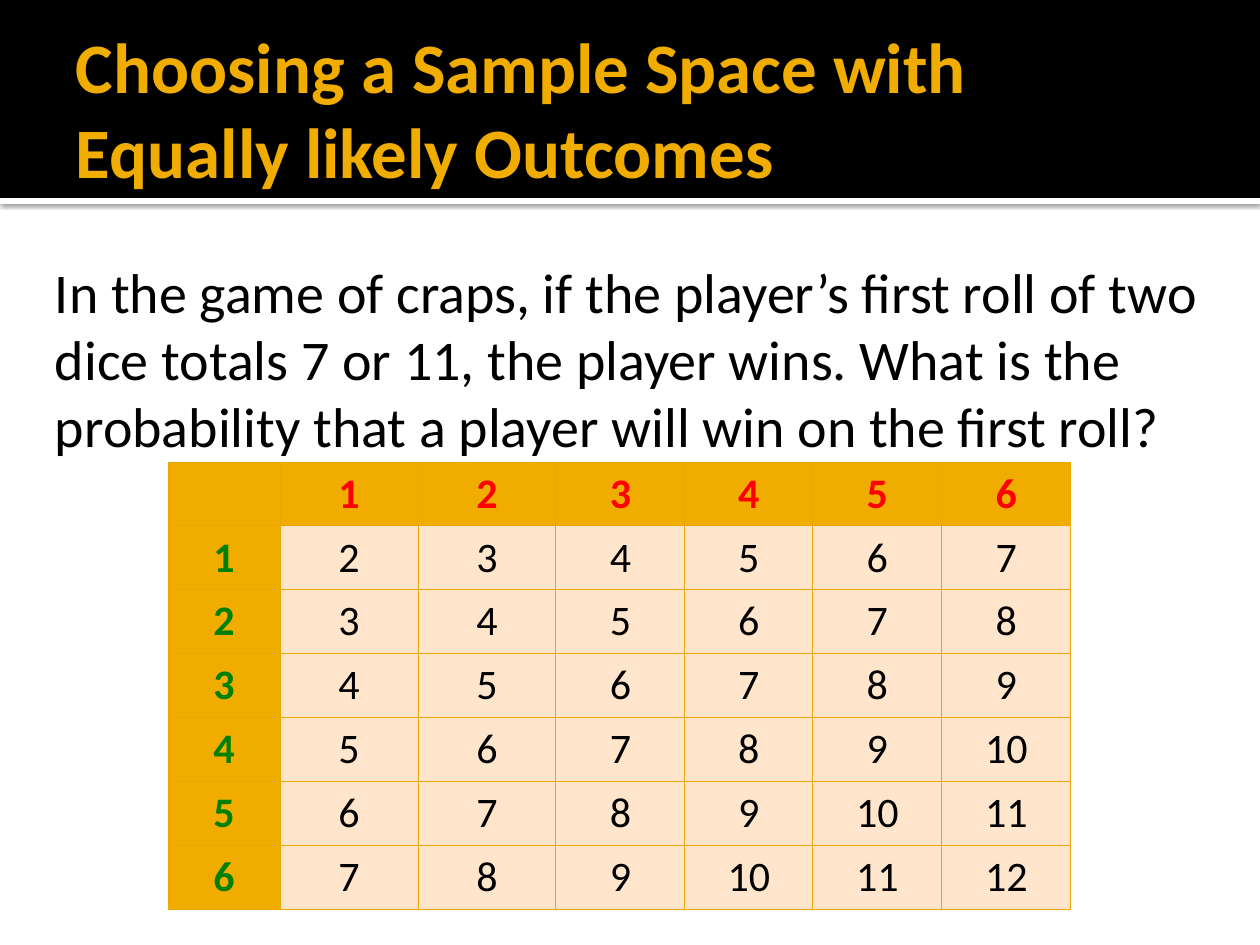
"""Build a slide on the equally likely outcomes of two dice."""
from dataclasses import dataclass
from typing import NamedTuple

from lxml.etree import SubElement
from pptx import Presentation
from pptx.dml.color import RGBColor
from pptx.enum.shapes import MSO_SHAPE as Shape
from pptx.enum.text import MSO_ANCHOR as Anchor, MSO_AUTO_SIZE as AutoSize, PP_ALIGN as Align
from pptx.oxml.ns import qn
from pptx.util import Emu, Pt

PX_PER_INCH = 126
PAGE_WIDTH, PAGE_HEIGHT = 1260, 945
TITLE = "Choosing a Sample Space with Equally likely Outcomes"
QUESTION = (
    "In the game of craps, if the player’s first roll of two dice totals 7 or 11, "
    "the player wins. What is the probability that a player will win on the first roll?"
)
DICE_FACES = range(1, 7)
COLUMN_WIDTHS = (112, 138, 138, 129, 128, 129, 129)
ROW_HEIGHT = 63


class Frame(NamedTuple):
    left: int
    top: int
    width: int
    height: int


class Insets(NamedTuple):
    left: int
    top: int
    right: int
    bottom: int


@dataclass(frozen=True)
class TextStyle:
    size: float
    color: str
    bold: bool = False


@dataclass(frozen=True)
class Bar:
    frame: Frame
    color: str
    shadowed: bool = False


@dataclass(frozen=True)
class Theme:
    font: str = "Calibri"
    header_fill: str = "F0AD00"
    cell_fill: str = "FFE5CB"
    border: str = "EBA900"
    title: TextStyle = TextStyle(40.5, "F0AD00", True)
    body: TextStyle = TextStyle(32, "000000")
    first_die: TextStyle = TextStyle(24, "FF0000", True)
    second_die: TextStyle = TextStyle(24, "008000", True)
    total: TextStyle = TextStyle(24, "000000")


THEME = Theme()
BARS = (
    Bar(Frame(0, 198, PAGE_WIDTH, 6), "FFFFFF", shadowed=True),
    Bar(Frame(0, 0, PAGE_WIDTH, 198), "000000"),
)


def px(length: int) -> Emu:
    """Turn pixels into EMU."""
    return Emu(round(length * 914400 / PX_PER_INCH))


def place(shape, frame: Frame) -> None:
    """Move and size a shape."""
    shape.left, shape.top, shape.width, shape.height = map(px, frame)


def write(text_frame, text: str, style: TextStyle, align: Align) -> None:
    """Set the text of a frame and format it."""
    text_frame.text = text
    para = text_frame.paragraphs[0]
    para.alignment = align
    for span in para.runs:
        span.font.name = THEME.font
        span.font.size = Pt(style.size)
        span.font.bold = style.bold
        span.font.color.rgb = RGBColor.from_string(style.color)


def fit_box(text_frame, insets: Insets, anchor: Anchor) -> None:
    """Set wrapping, anchor and insets of a text frame."""
    text_frame.word_wrap = True
    text_frame.auto_size = AutoSize.NONE
    text_frame.vertical_anchor = anchor
    text_frame.margin_left, text_frame.margin_top = px(insets.left), px(insets.top)
    text_frame.margin_right, text_frame.margin_bottom = px(insets.right), px(insets.bottom)


def add_bar(page, bar: Bar) -> None:
    """Draw a plain bar, with a soft shadow below if asked."""
    shape = page.shapes.add_shape(Shape.RECTANGLE, *map(px, bar.frame))
    shape.shadow.inherit = False
    shape.fill.solid()
    shape.fill.fore_color.rgb = RGBColor.from_string(bar.color)
    shape.line.fill.background()
    if bar.shadowed:
        effects = shape.element.spPr.find(qn("a:effectLst"))
        shadow = SubElement(effects, qn("a:outerShdw"), blurRad=str(Pt(2.5)),
                            dist=str(Pt(0.8)), dir="5400000", rotWithShape="0")
        tint = SubElement(shadow, qn("a:srgbClr"), val="000000")
        SubElement(tint, qn("a:alpha"), val="60000")


def set_title(page) -> None:
    """Format the title and bring it in front of the bars."""
    box = page.shapes.title
    place(box, Frame(63, 21, 1134, 173))
    write(box.text_frame, TITLE, THEME.title, Align.LEFT)
    fit_box(box.text_frame, Insets(13, 6, 6, 6), Anchor.MIDDLE)
    box.element.getparent().append(box.element)


def add_question(page) -> None:
    """Add the question below the title."""
    box = page.shapes.add_textbox(*map(px, Frame(31, 244, 1197, 218)))
    write(box.text_frame, QUESTION, THEME.body, Align.LEFT)
    fit_box(box.text_frame, Insets(8, 13, 13, 6), Anchor.TOP)
    box.text_frame.paragraphs[0]._p.get_or_add_pPr().set("marL", str(px(16)))


def fill_cell(cell, text: str, style: TextStyle, fill: str) -> None:
    """Write, outline and fill one table cell."""
    write(cell.text_frame, text, style, Align.CENTER)
    properties = cell._tc.get_or_add_tcPr()
    for side in ("lnL", "lnR", "lnT", "lnB"):
        line = SubElement(properties, qn(f"a:{side}"), w=str(Pt(0.5)))
        SubElement(SubElement(line, qn("a:solidFill")), qn("a:srgbClr"), val=THEME.border)
    cell.fill.solid()
    cell.fill.fore_color.rgb = RGBColor.from_string(fill)


def add_totals(page) -> None:
    """Add the table of totals of two dice."""
    count = len(COLUMN_WIDTHS)
    frame = Frame(168, 462, sum(COLUMN_WIDTHS), ROW_HEIGHT * count)
    table = page.shapes.add_table(count, count, *map(px, frame)).table
    for column, width in zip(table.columns, COLUMN_WIDTHS):
        column.width = px(width)
    for row in table.rows:
        row.height = px(ROW_HEIGHT)
    fill_cell(table.cell(0, 0), "", THEME.total, THEME.header_fill)
    for face in DICE_FACES:
        fill_cell(table.cell(0, face), str(face), THEME.first_die, THEME.header_fill)
        fill_cell(table.cell(face, 0), str(face), THEME.second_die, THEME.header_fill)
        for other in DICE_FACES:
            fill_cell(table.cell(face, other), str(face + other), THEME.total, THEME.cell_fill)


def main() -> None:
    """Build and save the deck."""
    deck = Presentation()
    deck.slide_width, deck.slide_height = px(PAGE_WIDTH), px(PAGE_HEIGHT)
    page = deck.slides.add_slide(deck.slide_layouts.get_by_name("Title Only"))
    for bar in BARS:
        add_bar(page, bar)
    set_title(page)
    add_question(page)
    add_totals(page)
    deck.save("out.pptx")


if __name__ == "__main__":
    main()
